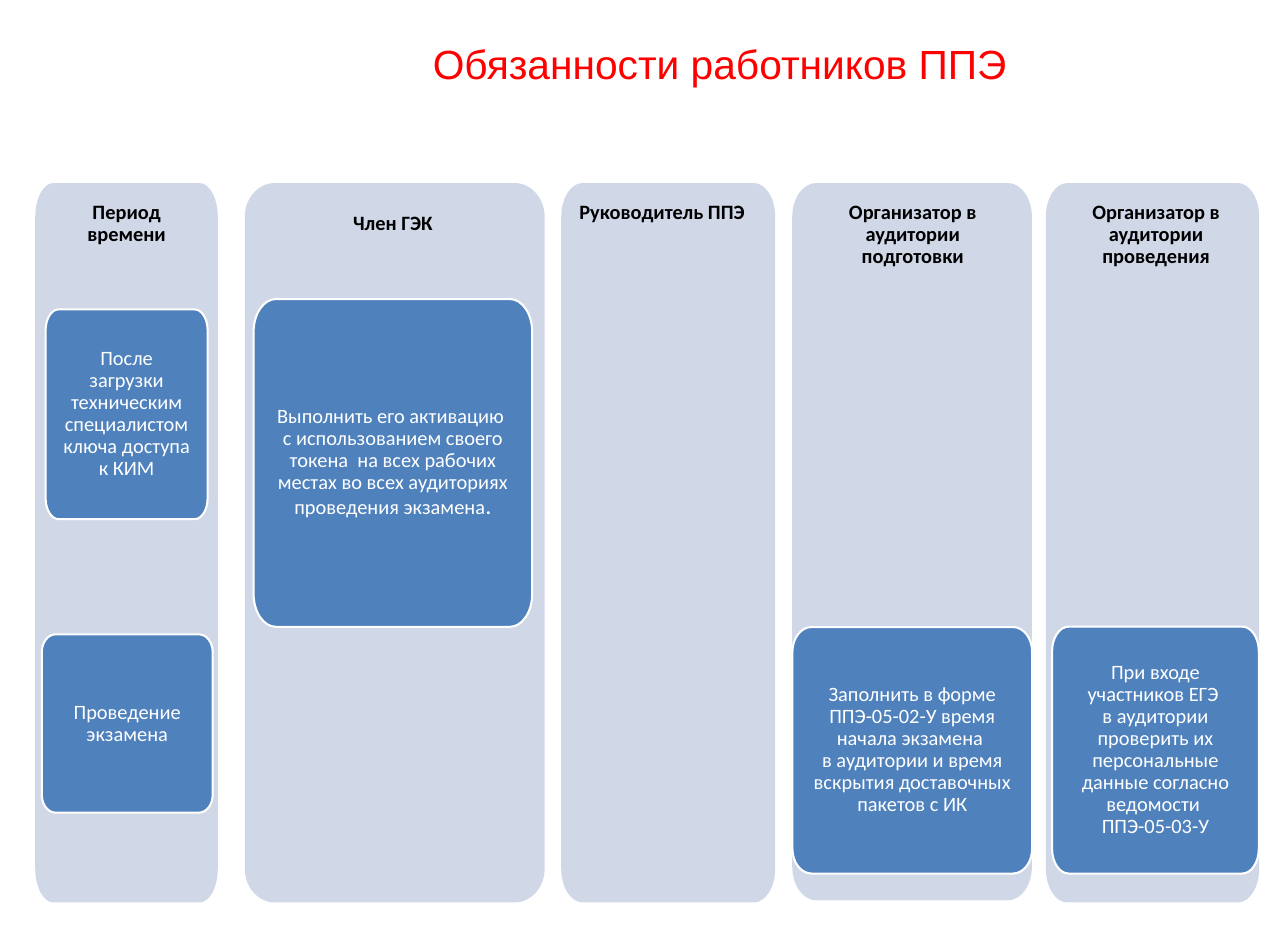
from dataclasses import dataclass

from lxml.etree import SubElement
from pptx import Presentation
from pptx.dml.color import RGBColor
from pptx.enum.text import MSO_ANCHOR as Anchor, MSO_AUTO_SIZE as AutoSize, PP_ALIGN as Align
from pptx.oxml.ns import qn
from pptx.util import Pt

COLORS = {"column": "D0D8E8", "card": "4F81BD", "white": "FFFFFF", "black": "000000", "title": "FF0000"}
SLIDE_WIDTH, SLIDE_HEIGHT = 1265, 920.9
COLUMN_TOP, COLUMN_HEIGHT = 179.7, 706.3
CURVE = 0.55


@dataclass
class Box:
    """A rectangle in points."""
    left: float
    top: float
    width: float
    height: float

    def inner(self, left, top, width, height):
        """Return a box placed relative to this one."""
        return Box(self.left + left, self.top + top, width, height)


@dataclass
class Column:
    """A duty column: its place, heading and cards relative to it."""
    left: float
    width: float
    heading: str
    heading_box: tuple
    cards: tuple = ()
    height: float = COLUMN_HEIGHT
    wrap: bool = True


COLUMNS = [
    Column(34.6, 179.3, "Период времени", (10.2, 11.8, 159.1, 56), (
        ((10.2, 124.1, 159.1, 205.9),
         [("Поcле загрузки техническим специалистом ключа доступа к КИМ", 20)]),
        ((6.5, 443.1, 167.8, 175), [("Проведение экзамена", 20)]),
    )),
    Column(240.4, 294.5, "Член ГЭК", (85.8, 22.6, 119.5, 34.6), (
        ((8.7, 113.9, 273.6, 321.8),
         [("Выполнить его активацию \nс использованием своего токена  на всех рабочих "
           "местах во всех аудиториях проведения экзамена", 20), (".", 24)]),
    ), wrap=False),
    Column(551.2, 210.2, "Руководитель ППЭ", (0, 11.8, 198, 56)),
    Column(778.1, 235.4, "Организатор в аудитории подготовки", (12.5, 11.8, 211.7, 78), (
        ((0.2, 435.9, 235.4, 242),
         [("Заполнить в форме ППЭ-05-02-У время начала экзамена \n"
           "в аудитории и время вскрытия доставочных пакетов с ИК", 20)]),
    ), height=704.2),
    Column(1027.2, 209.5, "Организатор в аудитории проведения", (6, 11.8, 204.5, 78), (
        ((6.1, 435.5, 203, 242.4),
         [("При входе участников ЕГЭ \nв аудитории проверить их персональные данные "
           "согласно ведомости \nППЭ-05-03-У", 20)]),
    )),
]


def rgb(name):
    """Return a named colour."""
    return RGBColor.from_string(COLORS[name])


def write_text(frame, runs, color, insets, font="Calibri", bold=False, spacing=0.9,
               anchor=Anchor.TOP, wrap=True):
    """Fill a text frame with one centred paragraph of sized runs."""
    horizontal, vertical = insets
    frame.margin_left = frame.margin_right = Pt(horizontal)
    frame.margin_top = frame.margin_bottom = Pt(vertical)
    frame.word_wrap = wrap
    frame.auto_size = AutoSize.NONE
    frame.vertical_anchor = anchor
    paragraph = frame.paragraphs[0]
    paragraph.alignment = Align.CENTER
    paragraph.line_spacing = spacing
    for text, size in runs:
        for index, line in enumerate(text.split("\n")):
            if index:
                paragraph.add_line_break()
            run = paragraph.add_run()
            run.text = line
            run.font.name = font
            run.font.size = Pt(size)
            run.font.bold = bold
            run.font.color.rgb = rgb(color)


def toward(start, end):
    """Return the control point on the way from a curve end to its corner."""
    return tuple(a + CURVE * (b - a) for a, b in zip(start, end))


def curve_corners(shape):
    """Turn each group of three corner segments into one Bézier curve."""
    segments = list(shape.element.iter(qn("a:lnTo")))
    for first in range(0, len(segments), 4):
        controls = segments[first:first + 3]
        outline = controls[0].getparent()
        curve = SubElement(outline, qn("a:cubicBezTo"))
        outline.replace(controls[0], curve)
        for segment in controls:
            curve.append(segment[0])
        for segment in controls[1:]:
            outline.remove(segment)


def add_rounded_panel(slide, box, fill, horizontal_ratio, vertical_ratio):
    """Draw a panel whose elliptical corners are shares of its width and height."""
    radius_x, radius_y = box.width * horizontal_ratio, box.height * vertical_ratio
    right, bottom = box.left + box.width, box.top + box.height
    near_x, far_x = box.left + radius_x, right - radius_x
    near_y, far_y = box.top + radius_y, bottom - radius_y
    corners = [
        ((box.left, near_y), (box.left, box.top), (near_x, box.top)),
        ((far_x, box.top), (right, box.top), (right, near_y)),
        ((right, far_y), (right, bottom), (far_x, bottom)),
        ((near_x, bottom), (box.left, bottom), (box.left, far_y)),
    ]
    points = [
        (Pt(x), Pt(y))
        for start, corner, end in corners
        for x, y in (start, toward(start, corner), toward(end, corner), end)
    ]
    builder = slide.shapes.build_freeform(*points[0])
    builder.add_line_segments(points[1:], close=True)
    shape = builder.convert_to_shape()
    curve_corners(shape)
    shape.shadow.inherit = False
    shape.fill.solid()
    shape.fill.fore_color.rgb = rgb(fill)
    shape.line.fill.background()
    return shape


def add_card(slide, box, runs):
    """Draw a blue duty card with white text."""
    card = add_rounded_panel(slide, box, "card", 0.08, 0.1)
    card.line.color.rgb = rgb("white")
    card.line.width = Pt(2)
    write_text(card.text_frame, runs, "white", (17, 14.4), anchor=Anchor.MIDDLE)


def add_heading(slide, box, column):
    """Write the heading of a column."""
    heading = slide.shapes.add_textbox(Pt(box.left), Pt(box.top), Pt(box.width), Pt(box.height))
    write_text(heading.text_frame, [(column.heading, 20)], "black", (12.2, 6.5), bold=True, wrap=column.wrap)


def add_column(slide, box, column):
    """Draw a column with its cards and heading."""
    add_rounded_panel(slide, box, "column", 0.1, 0.047)
    for place, runs in column.cards:
        add_card(slide, box.inner(*place), runs)
    add_heading(slide, box.inner(*column.heading_box), column)


def add_title(slide, box):
    """Place the slide title."""
    title = slide.shapes.title
    title.left, title.top = Pt(box.left), Pt(box.top)
    title.width, title.height = Pt(box.width), Pt(box.height)
    write_text(title.text_frame, [("Обязанности работников ППЭ", 40)], "title", (12.2, 6.5),
               font="Arial", spacing=1.0, anchor=Anchor.MIDDLE)


def main():
    """Build and save the slide."""
    presentation = Presentation()
    presentation.slide_width, presentation.slide_height = Pt(SLIDE_WIDTH), Pt(SLIDE_HEIGHT)
    slide = presentation.slides.add_slide(presentation.slide_layouts.get_by_name("Title Only"))
    add_title(slide, Box(276.2, 31.5, 861, 61))
    for column in COLUMNS:
        add_column(slide, Box(column.left, COLUMN_TOP, column.width, column.height), column)
    presentation.save("out.pptx")


if __name__ == "__main__":
    main()
